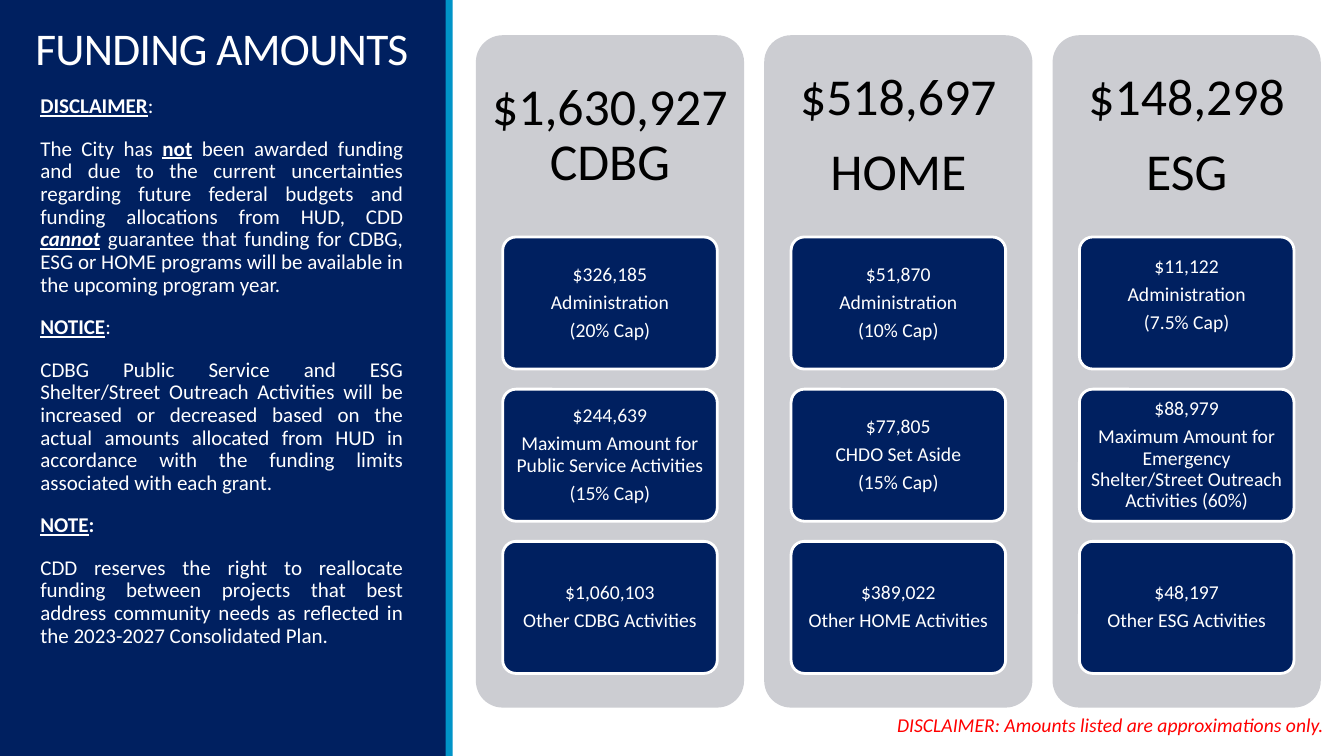
from lxml.etree import SubElement
from pptx import Presentation
from pptx.dml.color import RGBColor
from pptx.enum.shapes import MSO_SHAPE
from pptx.enum.text import MSO_ANCHOR, MSO_AUTO_SIZE, PP_ALIGN
from pptx.oxml.ns import qn
from pptx.util import Inches, Pt

SLIDE_W, SLIDE_H = 13.33, 7.5
NAVY, BLUE, GRAY = "002060", "0094C8", "CCCDD2"
WHITE, BLACK, RED = "FFFFFF", "000000", "FF0000"

GRANTS = [
    (["$1,630,927 CDBG"], [
        ["$326,185", "Administration", "(20% Cap)"],
        ["$244,639", "Maximum Amount for Public Service Activities", "(15% Cap)"],
        ["$1,060,103", "Other CDBG Activities"]]),
    (["$518,697", "HOME"], [
        ["$51,870", "Administration", "(10% Cap)"],
        ["$77,805", "CHDO Set Aside", "(15% Cap)"],
        ["$389,022", "Other HOME Activities"]]),
    (["$148,298", "ESG"], [
        ["$11,122", "Administration", "(7.5% Cap)"],
        ["$88,979", "Maximum Amount for Emergency Shelter/Street Outreach Activities (60%)"],
        ["$48,197", "Other ESG Activities"]]),
]
RAISED_CARD = "$11,122"  # this card's text sits above the middle

# Each paragraph is a list of (text, style); b = bold, i = italic, u = underlined
NOTICES = [
    [("DISCLAIMER", "bu"), (":", "")],
    [("The City has ", ""), ("not", "bu"),
     (" been awarded funding and due to the current uncertainties regarding future "
      "federal budgets and funding allocations from HUD, CDD ", ""),
     ("cannot", "biu"),
     (" guarantee that funding for CDBG, ESG or HOME programs will be available in "
      "the upcoming program year.", "")],
    [("NOTICE", "bu"), (":", "")],
    [("CDBG Public Service and ESG Shelter/Street Outreach Activities will be increased "
      "or decreased based on the actual amounts allocated from HUD in accordance with "
      "the funding limits associated with each grant.", "")],
    [("NOTE", "bu"), (":", "b")],
    [("CDD reserves the right to reallocate funding between projects that best address "
      "community needs as reflected in the 2023-2027 Consolidated Plan.", "")],
]


def color(hex_string):
    return RGBColor.from_string(hex_string)


def style_font(font, size, hex_string):
    font.name, font.size = "Calibri", Pt(size)
    font.color.rgb = color(hex_string)


def place(part, left, top, width, height):
    part.left, part.top = Inches(left), Inches(top)
    part.width, part.height = Inches(width), Inches(height)


def set_margins(frame, side, end):
    frame.margin_left = frame.margin_right = Inches(side)
    frame.margin_top = frame.margin_bottom = Inches(end)


def add_block(slide, preset, box, fill, outline=None):
    block = slide.shapes.add_shape(preset, *map(Inches, box))
    block.shadow.inherit = False
    block.fill.solid()
    block.fill.fore_color.rgb = color(fill)
    if outline:
        block.line.color.rgb = color(outline)
        block.line.width = Pt(2)
    else:
        block.line.fill.background()
    if preset == MSO_SHAPE.ROUNDED_RECTANGLE:
        block.adjustments[0] = 0.1
    return block


def write_centered(frame, lines, size, hex_string):
    frame.word_wrap = True
    frame.vertical_anchor = MSO_ANCHOR.MIDDLE
    frame.text = "\n".join(lines)
    for number, paragraph in enumerate(frame.paragraphs):
        paragraph.alignment = PP_ALIGN.CENTER
        paragraph.line_spacing = 0.9
        if number:
            paragraph.space_before = Pt(round(size * 0.35))
        style_font(paragraph.runs[0].font, size, hex_string)


def add_sidebar(slide, width):
    panel = add_block(slide, MSO_SHAPE.RECTANGLE, (0, 0, width, SLIDE_H), NAVY)
    stripe = add_block(slide, MSO_SHAPE.RECTANGLE, (width - 0.01, 0, 0.07, SLIDE_H), BLUE)
    tree = panel.element.getparent()
    for depth, backdrop in enumerate((panel, stripe), start=2):
        tree.insert(depth, backdrop.element)  # behind the placeholders

    title = slide.shapes.title
    place(title, 0.25, 0.19, width - 0.53, 0.6)
    frame = title.text_frame
    frame.text = "FUNDING AMOUNTS"
    frame.auto_size = MSO_AUTO_SIZE.NONE
    frame.vertical_anchor = MSO_ANCHOR.BOTTOM
    frame.margin_right = 0
    heading = frame.paragraphs[0]
    heading.alignment = PP_ALIGN.LEFT
    heading.line_spacing = 0.85
    style_font(heading.runs[0].font, 32.4, WHITE)
    heading.runs[0].font._element.set("spc", "-50")

    body = slide.placeholders[1]
    place(body, 0.3, 0.9, width - 0.63, 5.7)
    write_notices(body.text_frame)


def write_notices(frame):
    frame.auto_size = MSO_AUTO_SIZE.NONE
    for number, pieces in enumerate(NOTICES):
        paragraph = frame.add_paragraph() if number else frame.paragraphs[0]
        properties = paragraph._p.get_or_add_pPr()
        properties.set("marL", "0")
        properties.set("indent", "0")
        SubElement(properties, qn("a:buNone"))
        paragraph.alignment = PP_ALIGN.JUSTIFY if number % 2 else PP_ALIGN.LEFT
        paragraph.line_spacing = 0.9
        paragraph.space_before = Pt(12 if number else 0)
        paragraph.space_after = Pt(2)
        for text, style in pieces:
            run = paragraph.add_run()
            run.text = text
            style_font(run.font, 15, WHITE)
            run.font.bold = "b" in style
            run.font.italic = "i" in style
            run.font.underline = "u" in style


def add_grant(slide, box, total, cards):
    """Column with the grant total on top and its shares as cards below."""
    left, top, width, height = box
    add_block(slide, MSO_SHAPE.ROUNDED_RECTANGLE, box, GRAY)
    header_height = height * 0.3
    header = slide.shapes.add_textbox(*map(Inches, (left, top, width, header_height)))
    set_margins(header.text_frame, 0.15, 0.15)
    write_centered(header.text_frame, total, 37, BLACK)

    card_height, card_gap = 1.31, 0.2
    for row, lines in enumerate(cards):
        card_top = top + header_height + row * (card_height + card_gap)
        card = add_block(slide, MSO_SHAPE.ROUNDED_RECTANGLE,
                         (left + width * 0.1, card_top, width * 0.8, card_height),
                         NAVY, WHITE)
        set_margins(card.text_frame, 0.04, 0.03)
        if lines[0] == RAISED_CARD:
            card.text_frame.margin_bottom = Inches(0.19)
        write_centered(card.text_frame, lines, 14, WHITE)


def add_footnote(slide, box):
    footnote = slide.shapes.add_textbox(*map(Inches, box))
    frame = footnote.text_frame
    frame.word_wrap = True
    frame.text = "DISCLAIMER: Amounts listed are approximations only."
    frame.paragraphs[0].alignment = PP_ALIGN.CENTER
    font = frame.paragraphs[0].runs[0].font
    style_font(font, 14, RED)
    font.italic = True


def main():
    deck = Presentation()
    deck.slide_width, deck.slide_height = Inches(SLIDE_W), Inches(SLIDE_H)
    slide = deck.slides.add_slide(deck.slide_layouts[1])
    add_sidebar(slide, 4.43)
    column_width, column_gap = 2.66, 0.2
    for column, (total, cards) in enumerate(GRANTS):
        left = 4.72 + column * (column_width + column_gap)
        add_grant(slide, (left, 0.35, column_width, 6.67), total, cards)
    add_footnote(slide, (8.7, 7.02, 4.63, 0.34))
    deck.save("out.pptx")


if __name__ == "__main__":
    main()
